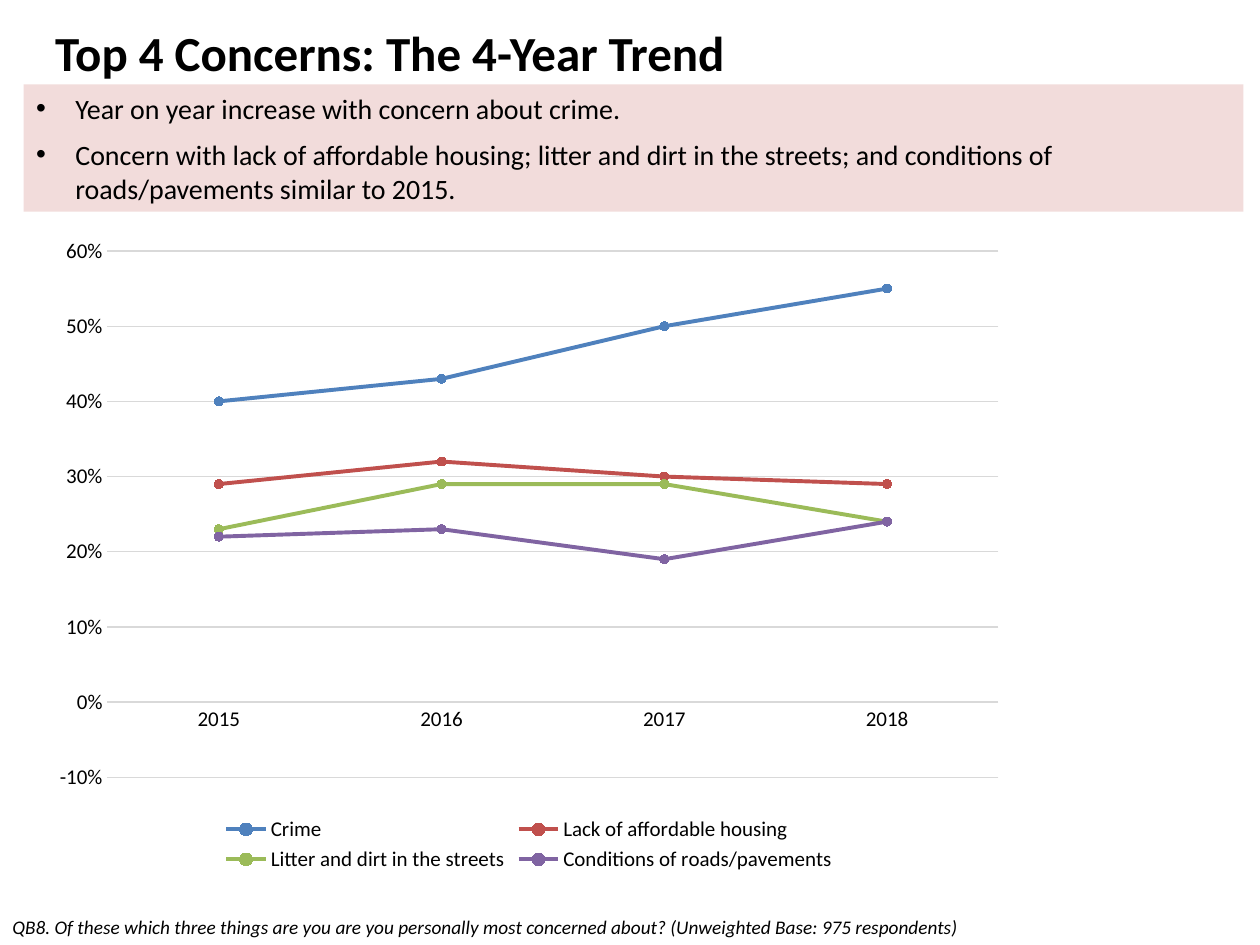
import pptx
import pptx.chart.data
import pptx.dml.color
import pptx.enum.chart
import pptx.enum.shapes
import pptx.enum.text
import pptx.oxml
import pptx.oxml.ns
import pptx.util

Pt = pptx.util.Pt
RGB = pptx.dml.color.RGBColor
MIDDLE = pptx.enum.text.MSO_ANCHOR.MIDDLE
LEFT = pptx.enum.text.PP_ALIGN.LEFT

BLACK = RGB(0x00, 0x00, 0x00)
PINK = RGB(0xF2, 0xDC, 0xDB)
GRAY = RGB(0xD9, 0xD9, 0xD9)
BLUE = RGB(0x4F, 0x81, 0xBD)
RED = RGB(0xC0, 0x50, 0x4D)
GREEN = RGB(0x9B, 0xBB, 0x59)
PURPLE = RGB(0x80, 0x64, 0xA2)

FACE = "Calibri"
YEARS = ["2015", "2016", "2017", "2018"]
TRENDS = [
    ("Crime", BLUE, (0.40, 0.43, 0.50, 0.55)),
    ("Lack of affordable housing", RED, (0.29, 0.32, 0.30, 0.29)),
    ("Litter and dirt in the streets", GREEN, (0.23, 0.29, 0.29, 0.24)),
    ("Conditions of roads/pavements", PURPLE, (0.22, 0.23, 0.19, 0.24)),
]
POINTS = [
    "Year on year increase with concern about crime.",
    "Concern with lack of affordable housing; litter and dirt in the streets; "
    "and conditions of roads/pavements similar to 2015.",
]


def style(font, size, face=FACE):
    font.name = face
    font.size = Pt(size)
    font.color.rgb = BLACK


def add_run(para, text, size, bold=False, italic=False):
    run = para.add_run()
    run.text = text
    style(run.font, size)
    run.font.bold = bold
    run.font.italic = italic


def add_label(slide, box, text, size, wrap=True, **look):
    frame = slide.shapes.add_textbox(*map(Pt, box)).text_frame
    frame.word_wrap = wrap
    frame.vertical_anchor = MIDDLE
    add_run(frame.paragraphs[0], text, size, **look)


def set_bullet(para):
    props = para._p.get_or_add_pPr()
    props.set("marL", str(Pt(22.5)))
    props.set("indent", str(Pt(-22.5)))
    space = pptx.oxml.ns.nsdecls("a")
    for mark in ('buFont {} typeface="Arial"', 'buChar {} char="•"'):
        props.append(pptx.oxml.parse_xml(f"<a:{mark.format(space)}/>"))


def add_panel(slide, box, points):
    """Draw a tinted box that holds a bullet list."""
    rect = pptx.enum.shapes.MSO_SHAPE.RECTANGLE
    panel = slide.shapes.add_shape(rect, *map(Pt, box))
    panel.shadow.inherit = False
    panel.fill.solid()
    panel.fill.fore_color.rgb = PINK
    panel.line.fill.background()
    frame = panel.text_frame
    frame.word_wrap = True
    frame.vertical_anchor = MIDDLE
    for i, text in enumerate(points):
        para = frame.add_paragraph() if i else frame.paragraphs[0]
        para.alignment = LEFT
        if i:
            para.space_before = Pt(7.3)
        set_bullet(para)
        add_run(para, text, 16)


def set_line(line, color, width):
    line.color.rgb = color
    line.width = Pt(width)


def style_axes(chart):
    none = pptx.enum.chart.XL_TICK_MARK.NONE
    cats, vals = chart.category_axis, chart.value_axis
    for axis in (cats, vals):
        axis.major_tick_mark = axis.minor_tick_mark = none
        style(axis.tick_labels.font, 12)
    set_line(cats.format.line, GRAY, 0.75)
    vals.format.line.fill.background()
    set_line(vals.major_gridlines.format.line, GRAY, 0.75)
    vals.minimum_scale, vals.maximum_scale = -0.1, 0.6
    vals.major_unit = 0.1
    vals.tick_labels.number_format = "0%"
    vals.tick_labels.number_format_is_linked = False


def style_trend(trend, color):
    trend.smooth = False
    set_line(trend.format.line, color, 2.25)
    mark = trend.marker
    mark.style = pptx.enum.chart.XL_MARKER_STYLE.CIRCLE
    mark.size = 5
    mark.format.fill.solid()
    mark.format.fill.fore_color.rgb = color
    set_line(mark.format.line, color, 0.75)


def add_trends(slide, box):
    data = pptx.chart.data.CategoryChartData(number_format="0%")
    data.categories = YEARS
    for name, _, vals in TRENDS:
        data.add_series(name, vals)
    kind = pptx.enum.chart.XL_CHART_TYPE.LINE_MARKERS
    chart = slide.shapes.add_chart(kind, *map(Pt, box), data).chart
    style(chart.font, 10, "Arial")
    chart.has_title = False
    chart.has_legend = True
    chart.legend.position = pptx.enum.chart.XL_LEGEND_POSITION.BOTTOM
    chart.legend.include_in_layout = False
    style(chart.legend.font, 12)
    style_axes(chart)
    plot = chart.plots[0]
    plot.vary_by_categories = False
    for trend, (_, color, _) in zip(plot.series, TRENDS):
        style_trend(trend, color)


def main():
    deck = pptx.Presentation()
    deck.slide_width, deck.slide_height = Pt(720), Pt(540)
    slide = deck.slides.add_slide(deck.slide_layouts[6])
    add_label(slide, (24.5, 7.2, 607, 45.4),
              "Top 4 Concerns: The 4-Year Trend", 28, bold=True)
    add_label(slide, (0, 519.2, 558.7, 20.8),
              "QB8. Of these which three things are you are you personally most "
              "concerned about? (Unweighted Base: 975 respondents)",
              11, wrap=False, italic=True)
    add_trends(slide, (23, 128.9, 558.7, 372.2))
    add_panel(slide, (13.5, 48.2, 697, 72.8), POINTS)
    deck.save("out.pptx")


if __name__ == "__main__":
    main()
